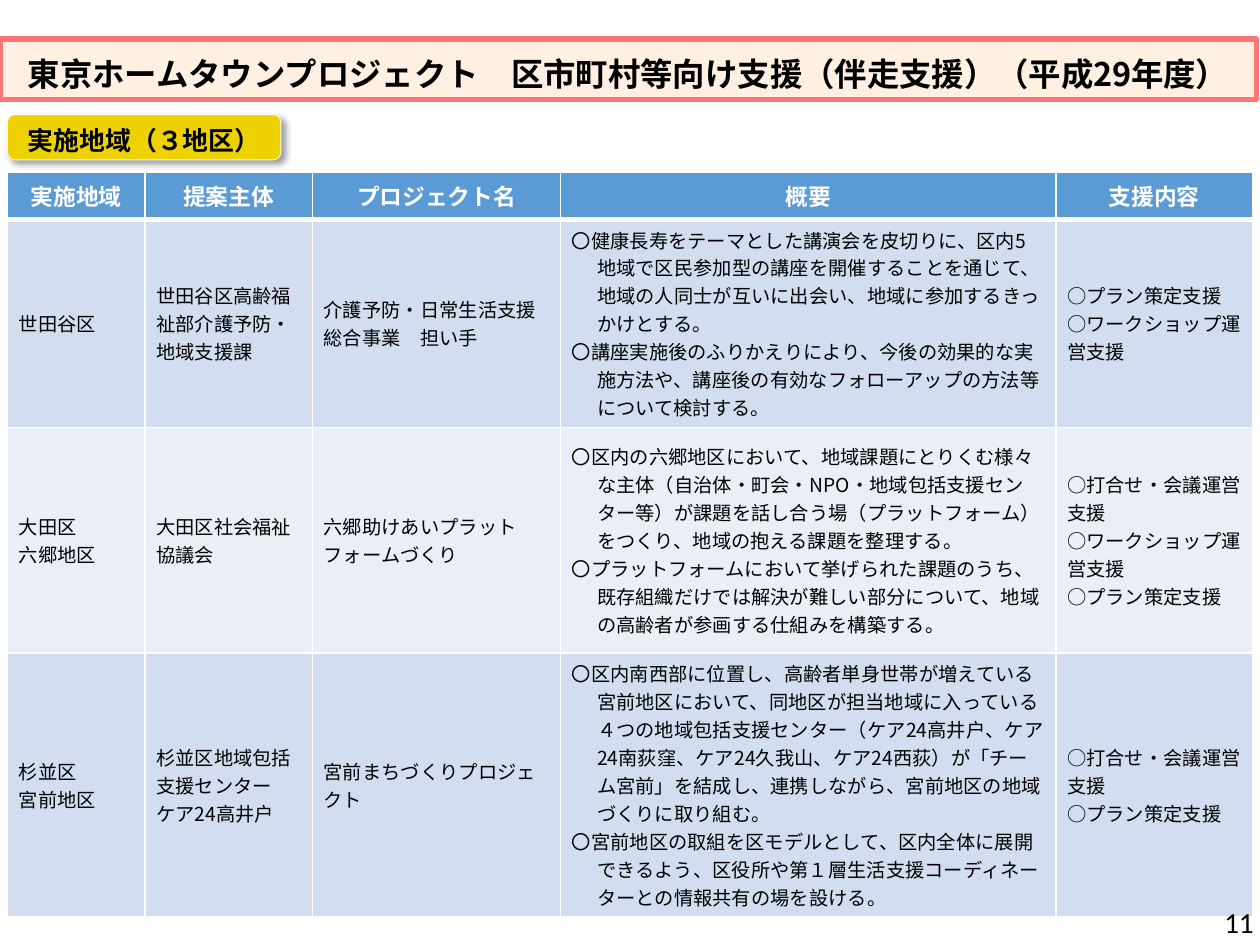
from dataclasses import dataclass

from lxml.etree import SubElement
from pptx import Presentation
from pptx.dml.color import RGBColor
from pptx.enum.shapes import MSO_SHAPE
from pptx.enum.text import MSO_ANCHOR, PP_ALIGN
from pptx.oxml.ns import qn
from pptx.util import Inches, Pt


@dataclass(frozen=True)
class Theme:
    font: str = "Noto Sans CJK JP"
    number_font: str = "Calibri"
    black: str = "000000"
    white: str = "FFFFFF"
    title_fill: str = "FFF0E1"
    title_line: str = "FF7575"
    label_fill: str = "EED200"
    label_line: str = "F9F9F9"
    header_fill: str = "5B9BD5"
    bands: tuple = ("D2DEEF", "EAEFF7")
    title_size: float = 18.5
    label_size: float = 14.8
    header_size: float = 13
    body_size: float = 11
    number_size: float = 16.6


def apply(target, values):
    for name, value in values.items():
        setattr(target, name, value)


def margins(left, top, right, bottom):
    sides = zip(("left", "top", "right", "bottom"), (left, top, right, bottom))
    return {f"margin_{side}": Inches(value) for side, value in sides}


class PageBuilder:
    def __init__(self, page, theme):
        self.page = page
        self.theme = theme

    def paragraphs(self, frame, lines, size, color, bold=False, align=PP_ALIGN.LEFT,
                   font=None, hanging=0):
        font = font or self.theme.font
        for index, line in enumerate(lines):
            para = frame.paragraphs[0] if index == 0 else frame.add_paragraph()
            para.alignment = align
            if hanging:
                properties = para._p.get_or_add_pPr()
                properties.set("marL", str(Inches(hanging)))
                properties.set("indent", str(-Inches(hanging)))
            span = para.add_run()
            span.text = line
            apply(span.font, {"name": font, "size": Pt(size), "bold": bold})
            span.font.color.rgb = RGBColor.from_string(color)
            SubElement(span._r.get_or_add_rPr(), qn("a:ea"), typeface=font)

    def shape(self, kind, place, fill, line, width, text, size, insets, wrap=True):
        box = self.page.shapes.add_shape(kind, *map(Inches, place))
        box.shadow.inherit = False
        box.fill.solid()
        box.fill.fore_color.rgb = RGBColor.from_string(fill)
        box.line.color.rgb = RGBColor.from_string(line)
        box.line.width = Pt(width)
        apply(box.text_frame, {"word_wrap": wrap, "vertical_anchor": MSO_ANCHOR.MIDDLE,
                               **margins(*insets)})
        self.paragraphs(box.text_frame, [text], size, self.theme.black, True,
                        PP_ALIGN.CENTER)
        return box

    def drop_shadow(self, box, blur, distance, angle, opacity):
        effects = box._element.spPr.find(qn("a:effectLst"))
        shadow = SubElement(effects, qn("a:outerShdw"), blurRad=str(Pt(blur)),
                            dist=str(Pt(distance)), dir=str(angle * 60000),
                            algn="tl", rotWithShape="0")
        color = SubElement(shadow, qn("a:srgbClr"), val=self.theme.black)
        SubElement(color, qn("a:alpha"), val=str(opacity * 1000))

    def text(self, place, text, size, font, align):
        box = self.page.shapes.add_textbox(*map(Inches, place))
        apply(box.text_frame, {"word_wrap": True, "vertical_anchor": MSO_ANCHOR.MIDDLE,
                               **margins(0.09, 0.05, 0.09, 0.05)})
        self.paragraphs(box.text_frame, [text], size, self.theme.black, align=align,
                        font=font)

    def borders(self, cell, widths):
        properties = cell._tc.get_or_add_tcPr()
        for side, width in widths.items():
            line = SubElement(properties, qn(f"a:ln{side}"), w=str(Pt(width)))
            fill = SubElement(line, qn("a:solidFill"))
            SubElement(fill, qn("a:srgbClr"), val=self.theme.white)

    def table(self, left, top, widths, heights, header, body, hanging_column):
        theme = self.theme
        place = (left, top, sum(widths), sum(heights))
        grid = self.page.shapes.add_table(
            len(heights), len(widths), *map(Inches, place)).table
        for column, width in zip(grid.columns, widths):
            column.width = Inches(width)
        for row, height in zip(grid.rows, heights):
            row.height = Inches(height)
        for row, entries in enumerate([[[name] for name in header], *body]):
            fill = theme.bands[(row - 1) % 2] if row else theme.header_fill
            for column, lines in enumerate(entries):
                cell = grid.cell(row, column)
                apply(cell, {"vertical_anchor": MSO_ANCHOR.MIDDLE,
                             **margins(0.09, 0.05, 0.09, 0.05)})
                self.borders(cell, {"L": 1, "R": 1, "T": 3 if row == 1 else 1,
                                    "B": 3 if row == 0 else 1})
                cell.fill.solid()
                cell.fill.fore_color.rgb = RGBColor.from_string(fill)
                if row == 0:
                    self.paragraphs(cell.text_frame, lines, theme.header_size,
                                    theme.white, True, PP_ALIGN.CENTER)
                else:
                    self.paragraphs(cell.text_frame, lines, theme.body_size, theme.black,
                                    hanging=0.2 if column == hanging_column else 0)


HEADER = ["実施地域", "提案主体", "プロジェクト名", "概要", "支援内容"]
PLAN = "○プラン策定支援"
WORKSHOP = "○ワークショップ運営支援"
MEETING = "○打合せ・会議運営支援"
PROJECTS = [
    [
        ["世田谷区"],
        ["世田谷区高齢福祉部介護予防・地域支援課"],
        ["介護予防・日常生活支援総合事業　担い手"],
        ["〇健康長寿をテーマとした講演会を皮切りに、区内5地域で区民参加型の講座を開催することを通じて、"
         "地域の人同士が互いに出会い、地域に参加するきっかけとする。",
         "〇講座実施後のふりかえりにより、今後の効果的な実施方法や、"
         "講座後の有効なフォローアップの方法等について検討する。"],
        [PLAN, WORKSHOP],
    ],
    [
        ["大田区", "六郷地区"],
        ["大田区社会福祉協議会"],
        ["六郷助けあいプラットフォームづくり"],
        ["〇区内の六郷地区において、地域課題にとりくむ様々な主体（自治体・町会・NPO・地域包括支援センター等）が"
         "課題を話し合う場（プラットフォーム）をつくり、地域の抱える課題を整理する。",
         "〇プラットフォームにおいて挙げられた課題のうち、既存組織だけでは解決が難しい部分について、"
         "地域の高齢者が参画する仕組みを構築する。"],
        [MEETING, WORKSHOP, PLAN],
    ],
    [
        ["杉並区", "宮前地区"],
        ["杉並区地域包括支援センター", "ケア24高井戸"],
        ["宮前まちづくりプロジェクト"],
        ["〇区内南西部に位置し、高齢者単身世帯が増えている宮前地区において、同地区が担当地域に入っている"
         "４つの地域包括支援センター（ケア24高井戸、ケア24南荻窪、ケア24久我山、ケア24西荻）が"
         "「チーム宮前」を結成し、連携しながら、宮前地区の地域づくりに取り組む。",
         "〇宮前地区の取組を区モデルとして、区内全体に展開できるよう、"
         "区役所や第１層生活支援コーディネーターとの情報共有の場を設ける。"],
        [MEETING, PLAN],
    ],
]


def main():
    theme = Theme()
    deck = Presentation()
    apply(deck, {"slide_width": Inches(10), "slide_height": Inches(7.5)})
    builder = PageBuilder(deck.slides.add_slide(deck.slide_layouts[6]), theme)

    label = builder.shape(MSO_SHAPE.ROUNDED_RECTANGLE, (0.06, 0.91, 2.17, 0.36),
                          theme.label_fill, theme.label_line, 0.5, "実施地域（３地区）",
                          theme.label_size, (0.1, 0.05, 0.1, 0), wrap=False)
    builder.drop_shadow(label, blur=4, distance=3, angle=45, opacity=40)
    builder.table(0.06, 1.37, [1.09, 1.33, 1.97, 3.93, 1.56], [0.37, 1.51, 1.79, 1.82],
                  HEADER, PROJECTS, hanging_column=HEADER.index("概要"))
    builder.shape(MSO_SHAPE.RECTANGLE, (0, 0.31, 9.97, 0.48), theme.title_fill,
                  theme.title_line, 3,
                  "東京ホームタウンプロジェクト　区市町村等向け支援（伴走支援）（平成29年度）",
                  theme.title_size, (0.09, 0.07, 0.09, 0))
    builder.text((7.71, 7.13, 2.33, 0.37), "11", theme.number_size,
                 theme.number_font, PP_ALIGN.RIGHT)
    deck.save("out.pptx")


if __name__ == "__main__":
    main()
